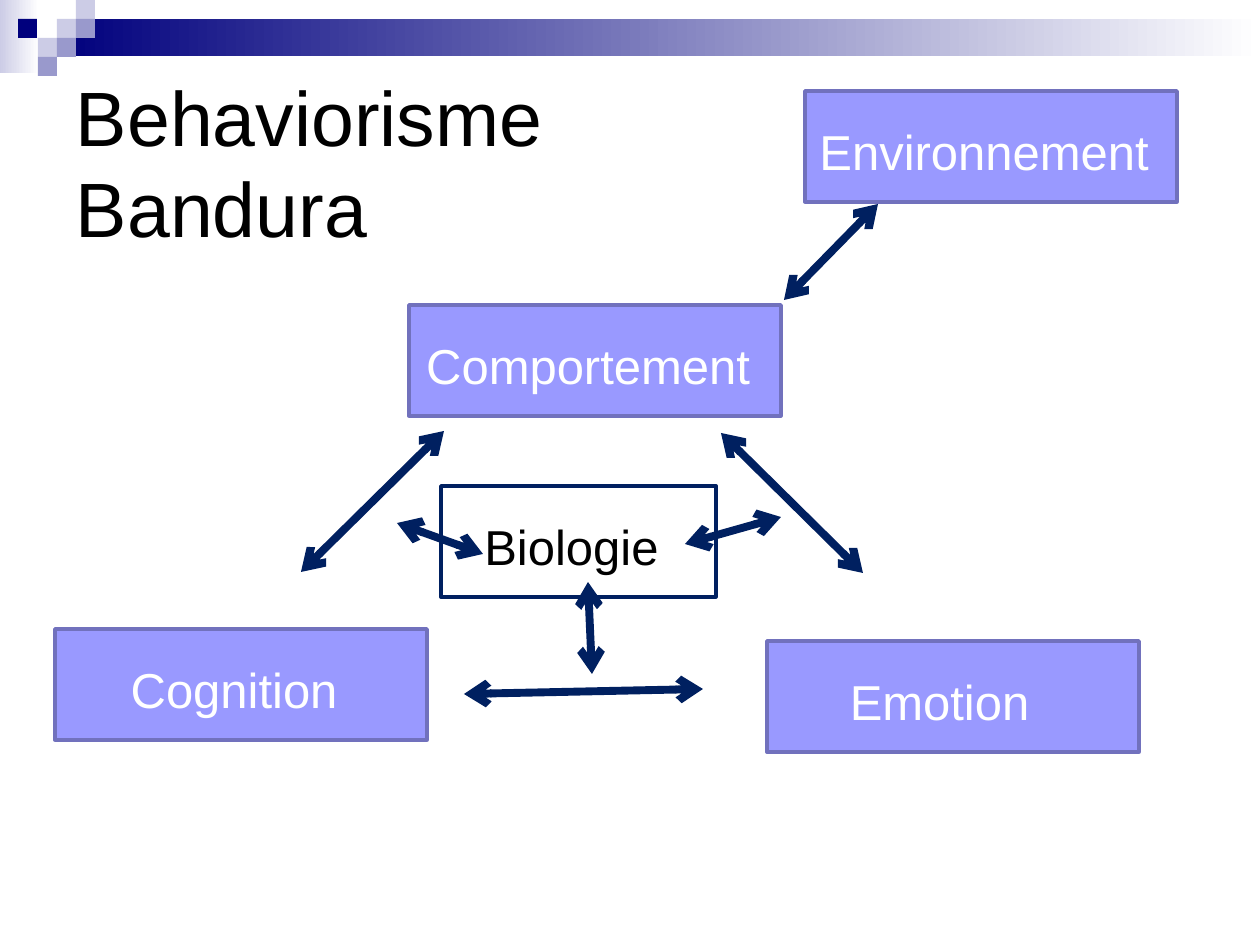
"""Build the Behaviorisme slide: a model of linked boxes and two-way arrows."""
from lxml.etree import SubElement
from pptx import Presentation
from pptx.dml.color import RGBColor
from pptx.enum.shapes import MSO_CONNECTOR as Connector, MSO_SHAPE as Shape
from pptx.enum.text import MSO_ANCHOR as Anchor, PP_ALIGN as Align
from pptx.oxml.ns import qn
from pptx.util import Emu, Pt

COLORS = {
    "black": "000000", "white": "FFFFFF", "navy": "00007D", "ink": "002060",
    "pale": "CCCCE6", "mid": "9999CC", "lilac": "9999FF", "edge": "7171BD",
}
FONT = "Arial"
TITLE = ["Behaviorisme", "Bandura"]
TITLE_AREA = (63, 63, 1134, 189)
BANDS = [((0, 0, 39, 73), "pale"), ((57, 19, 1203, 37), "navy")]
TILE = 19
TILES = [
    (57, 19, "pale"), (76, 0, "pale"), (76, 19, "mid"), (38, 38, "pale"),
    (18, 19, "navy"), (57, 38, "mid"), (38, 57, "mid"),
]
BOX_HEIGHT = 111
LILAC_STYLE = ("lilac", "edge", "white")
PLAIN_STYLE = (None, "ink", "black")
BOXES = [
    ("Comportement", 409, 305, 372, 14, LILAC_STYLE),
    ("Cognition", 55, 629, 372, 14, LILAC_STYLE),
    ("Emotion", 767, 641, 372, 27, LILAC_STYLE),
    ("Environnement", 805, 91, 372, 14, LILAC_STYLE),
    ("Biologie", 441, 486, 275, 14, PLAIN_STYLE),
]
ARROWS = [
    (784, 300, 878, 204), (301, 572, 444, 431), (863, 573, 721, 433),
    (703, 689, 464, 694), (483, 554, 397, 523), (781, 517, 685, 544),
    (588, 582, 592, 674),
]


def px(*lengths):
    return [Emu(round(length * 914400 / 126)) for length in lengths]


def color(name):
    return RGBColor.from_string(COLORS[name])


def add_rect(page, area, fill=None, line=None):
    box = page.shapes.add_shape(Shape.RECTANGLE, *px(*area))
    box.shadow.inherit = False
    if fill:
        box.fill.solid()
        box.fill.fore_color.rgb = color(fill)
    else:
        box.fill.background()
    if line:
        box.line.color.rgb = color(line)
        box.line.width = Pt(2)
    else:
        box.line.fill.background()
    return box


def add_band(page, area, start):
    band = add_rect(page, area)
    band.fill.gradient()
    band.fill.gradient_angle = 0
    for stop, name in zip(band.fill.gradient_stops, (start, "white")):
        stop.color.rgb = color(name)


def write(box, lines, size, ink, align, insets):
    frame = box.text_frame
    frame.word_wrap = True
    frame.vertical_anchor = Anchor.MIDDLE
    (frame.margin_left, frame.margin_top,
     frame.margin_right, frame.margin_bottom) = px(*insets)
    para = frame.paragraphs[0]
    para.alignment = align
    for index, line in enumerate(lines):
        if index:
            para.add_line_break()
        span = para.add_run()
        span.text = line
        span.font.name = FONT
        span.font.size = Pt(size)
        span.font.color.rgb = color(ink)
    return para


def add_arrow(page, ends):
    arrow = page.shapes.add_connector(Connector.STRAIGHT, *px(*ends))
    arrow.line.color.rgb = color("ink")
    arrow.line.width = Pt(4.5)
    line = arrow.line._get_or_add_ln()
    for end in ("a:headEnd", "a:tailEnd"):
        SubElement(line, qn(end), type="arrow")
    SubElement(arrow._element.spPr, qn("a:effectLst"))


def main():
    deck = Presentation()
    deck.slide_width, deck.slide_height = px(1260, 945)
    page = deck.slides.add_slide(deck.slide_layouts[6])
    for area, start in BANDS:
        add_band(page, area, start)
    for left, top, fill in TILES:
        add_rect(page, (left, top, TILE, TILE), fill)
    title = page.shapes.add_textbox(*px(*TITLE_AREA))
    para = write(title, TITLE, 44, "black", Align.LEFT, (13, 8, 13, 0))
    para.line_spacing = Pt(52.5)
    for label, left, top, width, right_inset, (fill, line, ink) in BOXES:
        box = add_rect(page, (left, top, width, BOX_HEIGHT), fill, line)
        write(box, [label], 28, ink, Align.CENTER, (0, 8, right_inset, 0))
    for ends in ARROWS:
        add_arrow(page, ends)
    deck.save("out.pptx")


if __name__ == "__main__":
    main()
